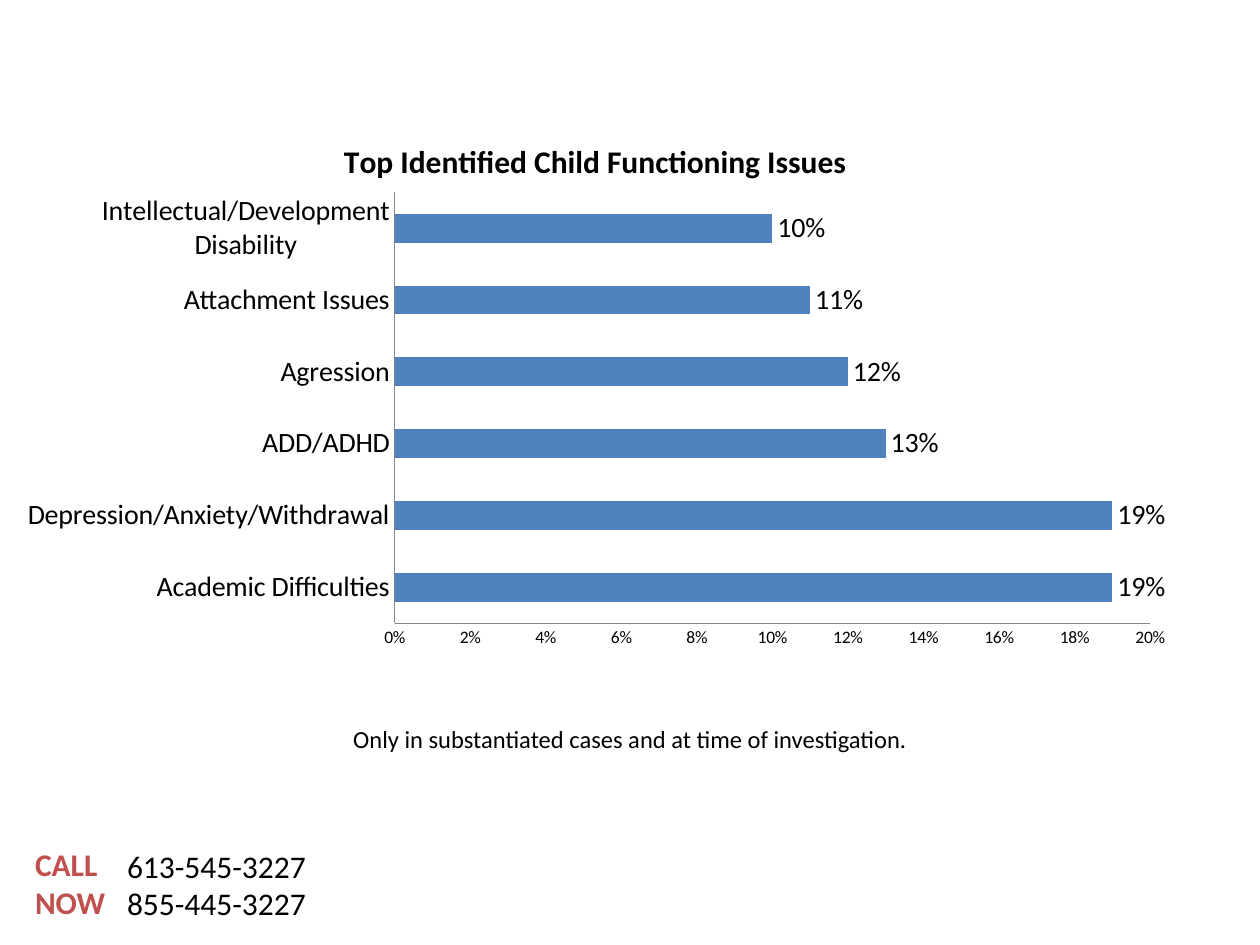
import pptx
import pptx.chart.data
import pptx.dml.color
import pptx.enum.chart
import pptx.enum.text
import pptx.oxml
import pptx.util
from pptx.oxml.ns import nsdecls
from pptx.util import Inches

HUES = {"text": "000000", "bar": "4F81BD", "call": "C0504D", "axis": "868686"}


def hue(name):
    return pptx.dml.color.RGBColor.from_string(HUES[name])


def style(font, size, name="text", bold=False):
    for key, val in {"name": "Calibri", "size": pptx.util.Pt(size), "bold": bold}.items():
        setattr(font, key, val)
    font.color.rgb = hue(name)


deck = pptx.Presentation()
deck.slide_width, deck.slide_height = Inches(10), Inches(7.5)
slide = deck.slides.add_slide(deck.slide_layouts[6])

# Bar chart
data = pptx.chart.data.CategoryChartData(number_format="0%")
issues = {
    "Academic Difficulties": 0.19,
    "Depression/Anxiety/Withdrawal": 0.19,
    "ADD/ADHD": 0.13,
    "Agression": 0.12,
    "Attachment Issues": 0.11,
    "Intellectual/Development Disability": 0.1,
}
data.categories = list(issues)
data.add_series("Series 1", list(issues.values()))
chart = slide.shapes.add_chart(
    pptx.enum.chart.XL_CHART_TYPE.BAR_CLUSTERED,
    Inches(0.04), Inches(0.92), Inches(9.37), Inches(4.33), data).chart
style(chart.font, 10)
chart.has_legend = False
chart.has_title = True
title = chart.chart_title.text_frame
title.text = "Top Identified Child Functioning Issues"
style(title.paragraphs[0].runs[0].font, 18, bold=True)

for axis, size in ((chart.category_axis, 16), (chart.value_axis, 10)):
    style(axis.tick_labels.font, size)
    axis.has_major_gridlines = False
    axis.major_tick_mark = axis.minor_tick_mark = pptx.enum.chart.XL_TICK_MARK.NONE
    axis.format.line.color.rgb = hue("axis")
    axis.format.line.width = pptx.util.Pt(0.75)
scale = {"minimum_scale": 0, "maximum_scale": 0.2, "major_unit": 0.02}
for key, val in scale.items():
    setattr(chart.value_axis, key, val)
ticks = chart.value_axis.tick_labels
ticks.number_format, ticks.number_format_is_linked = "0%", False

plot = chart.plots[0]
plot.gap_width = 150
plot.vary_by_categories = False
bars = plot.series[0]
bars.format.fill.solid()
bars.format.fill.fore_color.rgb = hue("bar")
labels = bars.data_labels
marks = {"show_value": True, "number_format": "0%", "number_format_is_linked": False,
         "position": pptx.enum.chart.XL_LABEL_POSITION.OUTSIDE_END}
for key, val in marks.items():
    setattr(labels, key, val)
style(labels.font, 16)

# Fixed inner plot area, as fractions of the chart
area = chart.element.chart.plotArea
for old in area.findall(pptx.oxml.ns.qn("c:layout")):
    area.remove(old)
frame = "".join(f'<c:{tag} val="{val}"/>' for tag, val in (
    ("layoutTarget", "inner"), ("xMode", "edge"), ("yMode", "edge"),
    ("x", 0.33), ("y", 0.14), ("w", 0.64), ("h", 0.79)))
area.insert(0, pptx.oxml.parse_xml(
    f'<c:layout {nsdecls("c")}><c:manualLayout>{frame}</c:manualLayout></c:layout>'))

# Phone block and note
left, mid = pptx.enum.text.PP_ALIGN.LEFT, pptx.enum.text.PP_ALIGN.CENTER
for place, lines, size, name, bold, align in (
    ((0.91, 6.67, 1.65, 0.71), ["613-545-3227", "855-445-3227"], 18, "text", False, left),
    ((0.18, 6.66, 0.94, 0.71), ["CALL", "NOW"], 18, "call", True, left),
    ((0, 5.7, 10, 0.34), ["Only in substantiated cases and at time of investigation."],
     14, "text", False, mid),
):
    text = slide.shapes.add_textbox(*map(Inches, place)).text_frame
    text.word_wrap = True
    text.auto_size = pptx.enum.text.MSO_AUTO_SIZE.SHAPE_TO_FIT_TEXT
    text.text = "\n".join(lines)
    for para in text.paragraphs:
        para.alignment = align
        style(para.runs[0].font, size, name, bold)

deck.save("out.pptx")
